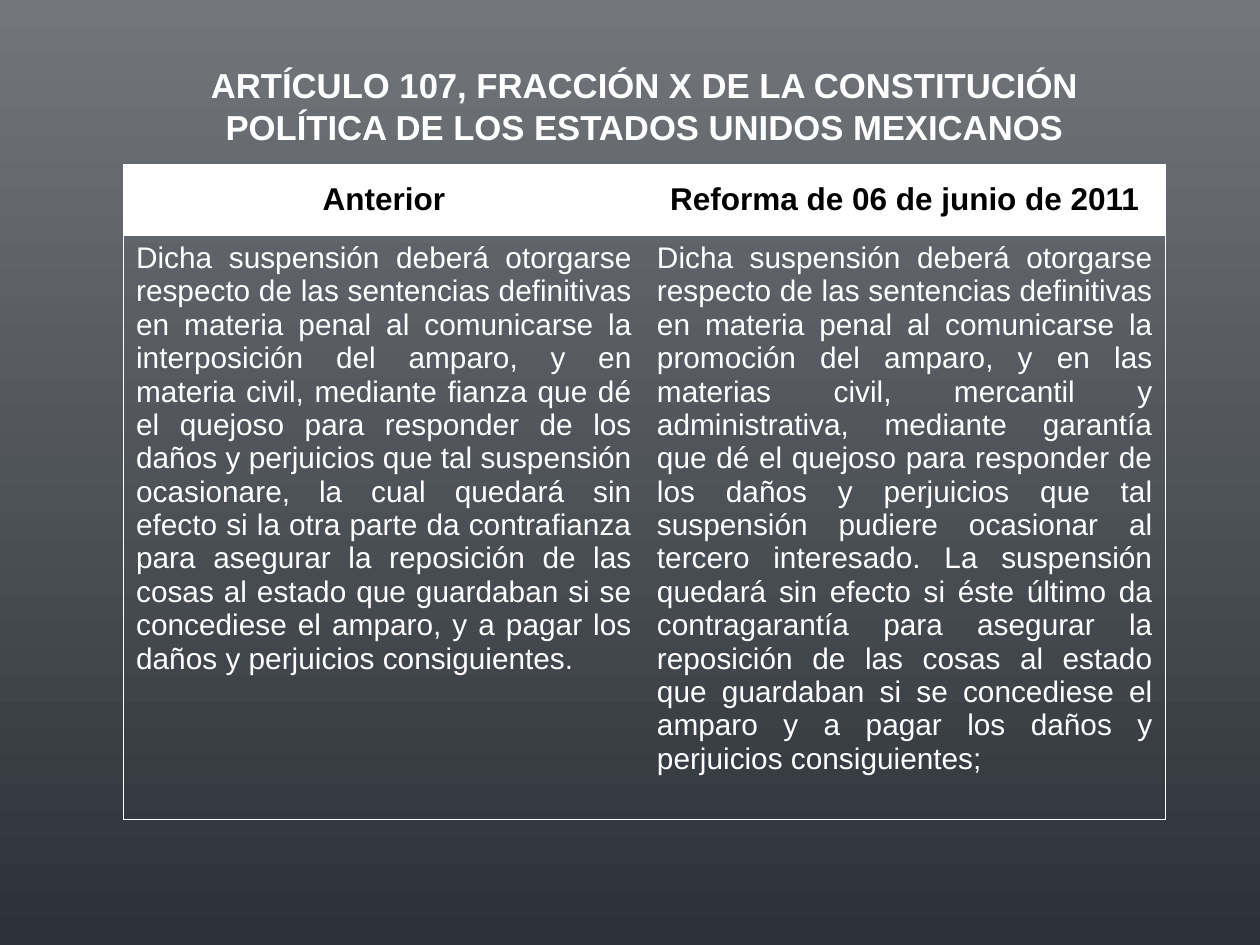
from lxml import etree
from pptx import Presentation
from pptx.dml.color import RGBColor
from pptx.enum.text import MSO_ANCHOR, PP_ALIGN
from pptx.oxml.ns import qn
from pptx.util import Cm, Pt

CENTER, JUSTIFY = PP_ALIGN.CENTER, PP_ALIGN.JUSTIFY
TOP, MIDDLE = MSO_ANCHOR.TOP, MSO_ANCHOR.MIDDLE
BLANK = 6
WHITE, BLACK = "FFFFFF", "000000"

TITLE = ("ARTÍCULO 107, FRACCIÓN X DE LA CONSTITUCIÓN "
         "POLÍTICA DE LOS ESTADOS UNIDOS MEXICANOS")
ROWS = [
    ["Anterior", "Reforma de 06 de junio de 2011"],
    ["Dicha suspensión deberá otorgarse respecto de las sentencias definitivas "
     "en materia penal al comunicarse la interposición del amparo, y en materia "
     "civil, mediante fianza que dé el quejoso para responder de los daños y "
     "perjuicios que tal suspensión ocasionare, la cual quedará sin efecto si la "
     "otra parte da contrafianza para asegurar la reposición de las cosas al "
     "estado que guardaban si se concediese el amparo, y a pagar los daños y "
     "perjuicios consiguientes.",
     "Dicha suspensión deberá otorgarse respecto de las sentencias definitivas "
     "en materia penal al comunicarse la promoción del amparo, y en las materias "
     "civil, mercantil y administrativa, mediante garantía que dé el quejoso para "
     "responder de los daños y perjuicios que tal suspensión pudiere ocasionar al "
     "tercero interesado. La suspensión quedará sin efecto si éste último da "
     "contragarantía para asegurar la reposición de las cosas al estado que "
     "guardaban si se concediese el amparo y a pagar los daños y perjuicios "
     "consiguientes;"],
]


def rgb(value):
    return RGBColor.from_string(value)


def write(tf, text, size=17, color=WHITE, bold=False, align=JUSTIFY, spacing=None):
    tf.word_wrap = True
    p = tf.paragraphs[0]
    p.alignment = align
    if spacing:
        p.line_spacing = Pt(spacing)
    r = p.add_run()
    r.text = text
    r.font.name, r.font.size, r.font.bold = "Arial", Pt(size), bold
    r.font.color.rgb = rgb(color)


class Deck:
    """Slide builder with the shared colours and border style."""

    def __init__(self, border=WHITE, border_width=0.75):
        self.border, self.border_width = border, border_width
        self.prs = Presentation()
        self.prs.slide_width, self.prs.slide_height = Cm(25.4), Cm(19.05)
        self.s = self.prs.slides.add_slide(self.prs.slide_layouts[BLANK])

    def background(self, top, bottom):
        fill = self.s.background.fill
        fill.gradient()
        fill.gradient_angle = 270
        for stop, color, position in zip(fill.gradient_stops, (top, bottom), (0, 1)):
            stop.color.rgb = rgb(color)
            stop.position = position

    def title(self, text, x, y, w, h):
        tf = self.s.shapes.add_textbox(Cm(x), Cm(y), Cm(w), Cm(h)).text_frame
        tf.vertical_anchor = MIDDLE
        write(tf, text, size=19.8, bold=True, align=CENTER, spacing=24)

    def edges(self, cell, drawn):
        tcPr = cell._tc.get_or_add_tcPr()
        for i, side in enumerate("LRTB"):
            ln = etree.Element(qn(f"a:ln{side}"), w=str(Pt(self.border_width)))
            if side in drawn:
                fill = etree.SubElement(ln, qn("a:solidFill"))
                etree.SubElement(fill, qn("a:srgbClr"), val=self.border)
            else:
                etree.SubElement(ln, qn("a:noFill"))
            tcPr.insert(i, ln)

    def table(self, rows, x, y, w, heights):
        cols = len(rows[0])
        table = self.s.shapes.add_table(
            len(rows), cols, Cm(x), Cm(y), Cm(w), Cm(sum(heights))).table
        table.horz_banding = False
        for i, (row, height) in enumerate(zip(rows, heights)):
            table.rows[i].height = Cm(height)
            for j, text in enumerate(row):
                cell = table.cell(i, j)
                if i == 0:
                    cell.fill.solid()
                    cell.fill.fore_color.rgb = rgb(WHITE)
                    cell.vertical_anchor = MIDDLE
                    write(cell.text_frame, text, size=18, color=BLACK, bold=True, align=CENTER)
                else:
                    cell.fill.background()
                    cell.vertical_anchor = TOP
                    write(cell.text_frame, text)
                sides = "T" if i == 0 else "TB"
                sides += "L" if j == 0 else ""
                sides += "R" if j == cols - 1 else ""
                self.edges(cell, sides)


def main():
    deck = Deck()
    deck.background("72757A", "2C3139")
    deck.title(TITLE, 2.49, 1.32, 21, 1.6)
    deck.table(ROWS, 2.49, 3.32, 21, [1.42, 11.69])
    deck.prs.save("out.pptx")


if __name__ == "__main__":
    main()
